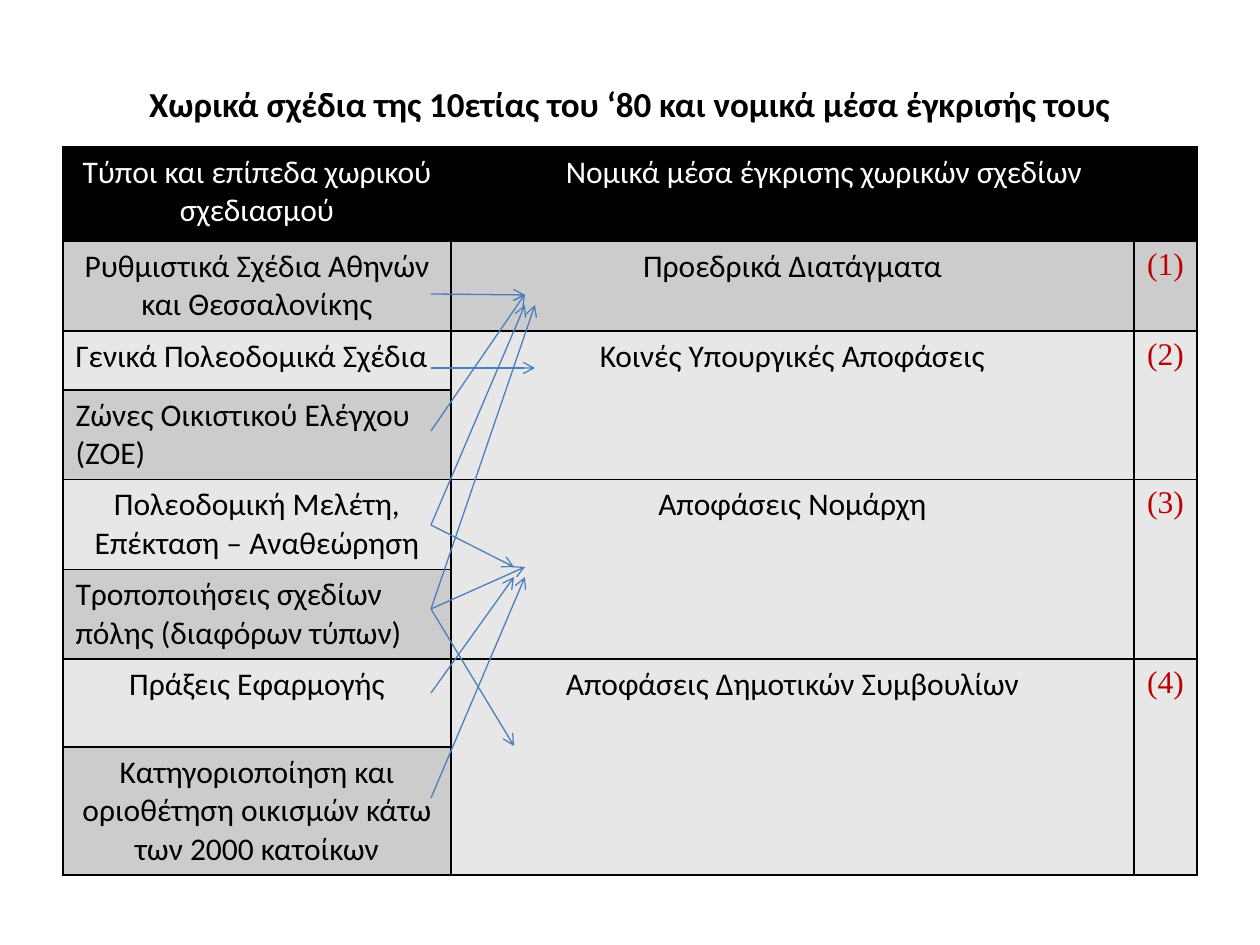
from lxml.etree import SubElement
from pptx import Presentation
from pptx.dml.color import RGBColor
from pptx.enum.shapes import MSO_CONNECTOR as Connector
from pptx.enum.text import MSO_ANCHOR as Anchor, PP_ALIGN as Align
from pptx.oxml.ns import qn
from pptx.util import Emu, Pt

EMU_PER_PX = 914400 / 126  # 126 px to the inch

BLACK = RGBColor(0x00, 0x00, 0x00)
WHITE = RGBColor(0xFF, 0xFF, 0xFF)
DARK_GREY = RGBColor(0xCC, 0xCC, 0xCC)
LIGHT_GREY = RGBColor(0xE7, 0xE7, 0xE7)
RED = RGBColor(0xC0, 0x00, 0x00)
BLUE = RGBColor(0x4B, 0x7E, 0xBC)

TITLE = "Χωρικά σχέδια της 10ετίας του ‘80 και νομικά μέσα έγκρισής τους"
HEADINGS = ("Τύποι και επίπεδα χωρικού σχεδιασμού",
            "Νομικά μέσα έγκρισης χωρικών σχεδίων")

# Plan types: text, alignment
PLANS = [
    ("Ρυθμιστικά Σχέδια Αθηνών και Θεσσαλονίκης", Align.CENTER),
    ("Γενικά Πολεοδομικά Σχέδια", Align.LEFT),
    ("Ζώνες Οικιστικού Ελέγχου (ZOE)", Align.LEFT),
    ("Πολεοδομική Μελέτη, Επέκταση – Αναθεώρηση", Align.CENTER),
    ("Τροποποιήσεις σχεδίων πόλης (διαφόρων τύπων)", Align.LEFT),
    ("Πράξεις Εφαρμογής", Align.CENTER),
    ("Κατηγοριοποίηση και οριοθέτηση οικισμών κάτω των 2000 κατοίκων",
     Align.CENTER),
]
# Legal instruments: text, first row, last row, fill
INSTRUMENTS = [
    ("Προεδρικά Διατάγματα", 1, 1, DARK_GREY),
    ("Κοινές Υπουργικές Αποφάσεις", 2, 3, LIGHT_GREY),
    ("Αποφάσεις Νομάρχη", 4, 5, LIGHT_GREY),
    ("Αποφάσεις Δημοτικών Συμβουλίων", 6, 7, LIGHT_GREY),
]
COLUMN_WIDTHS = (388, 683, 63)
ROW_HEIGHTS = (94, 90, 59, 89, 90, 89, 88, 128)

# Arrows all leave the first column at one x: start y, end x, end y
ARROW_START_X = 431
ARROWS = [
    (294, 525, 295), (431, 525, 294), (525, 525, 305), (609, 525, 567),
    (609, 535, 305), (693, 514, 577), (798, 525, 577), (368, 535, 368),
    (609, 514, 746), (525, 514, 567),
]


def px(length):
    return Emu(round(length * EMU_PER_PX))


def write(frame, text, size=18, font="Calibri", color=BLACK, bold=False,
          align=Align.CENTER):
    para = frame.paragraphs[0]
    para.alignment = align
    span = para.add_run()
    span.text = text
    span.font.size = Pt(size)
    span.font.name = font
    span.font.bold = bold
    span.font.color.rgb = color


def add_title(page):
    box = page.shapes.title
    box.left, box.top, box.width, box.height = px(63), px(38), px(1134), px(130)
    box.text_frame.vertical_anchor = Anchor.MIDDLE
    write(box.text_frame, TITLE, size=20, bold=True)


def style_cell(cell, fill):
    properties = cell._tc.get_or_add_tcPr()
    for side in ("a:lnL", "a:lnR", "a:lnT", "a:lnB"):
        border = SubElement(properties, qn(side), w=str(Pt(1)))
        paint = SubElement(border, qn("a:solidFill"))
        SubElement(paint, qn("a:srgbClr"), val=str(BLACK))
    cell.fill.solid()
    cell.fill.fore_color.rgb = fill


def add_plan_table(page):
    table = page.shapes.add_table(
        len(ROW_HEIGHTS), len(COLUMN_WIDTHS), px(63), px(147),
        px(sum(COLUMN_WIDTHS)), px(sum(ROW_HEIGHTS))).table
    for column, width in zip(table.columns, COLUMN_WIDTHS):
        column.width = px(width)
    for row, height in zip(table.rows, ROW_HEIGHTS):
        row.height = px(height)

    # Heading row
    for column in range(3):
        style_cell(table.cell(0, column), BLACK)
    for column, heading in enumerate(HEADINGS):
        write(table.cell(0, column).text_frame, heading, color=WHITE)
    table.cell(0, 1).merge(table.cell(0, 2))

    # Plan types, in alternating greys
    for row, (plan, align) in enumerate(PLANS, start=1):
        cell = table.cell(row, 0)
        style_cell(cell, DARK_GREY if row % 2 else LIGHT_GREY)
        write(cell.text_frame, plan, align=align)

    # Legal instruments and their numbers
    for number, (name, first, last, fill) in enumerate(INSTRUMENTS, start=1):
        for column in (1, 2):
            for row in range(first, last + 1):
                style_cell(table.cell(row, column), fill)
            if last > first:
                table.cell(first, column).merge(table.cell(last, column))
        write(table.cell(first, 1).text_frame, name)
        write(table.cell(first, 2).text_frame, f"({number})",
              font="Times New Roman", color=RED)


def add_arrow(page, start_y, end_x, end_y):
    arrow = page.shapes.add_connector(
        Connector.STRAIGHT, px(ARROW_START_X), px(start_y), px(end_x), px(end_y))
    arrow.line.color.rgb = BLUE
    arrow.line.width = Pt(0.75)
    SubElement(arrow.line._get_or_add_ln(), qn("a:tailEnd"), type="arrow")
    SubElement(arrow._element.spPr, qn("a:effectLst"))


def main():
    deck = Presentation()
    deck.slide_width, deck.slide_height = px(1260), px(945)
    page = deck.slides.add_slide(deck.slide_layouts[5])
    add_title(page)
    add_plan_table(page)
    for arrow in ARROWS:
        add_arrow(page, *arrow)
    deck.save("out.pptx")


if __name__ == "__main__":
    main()
